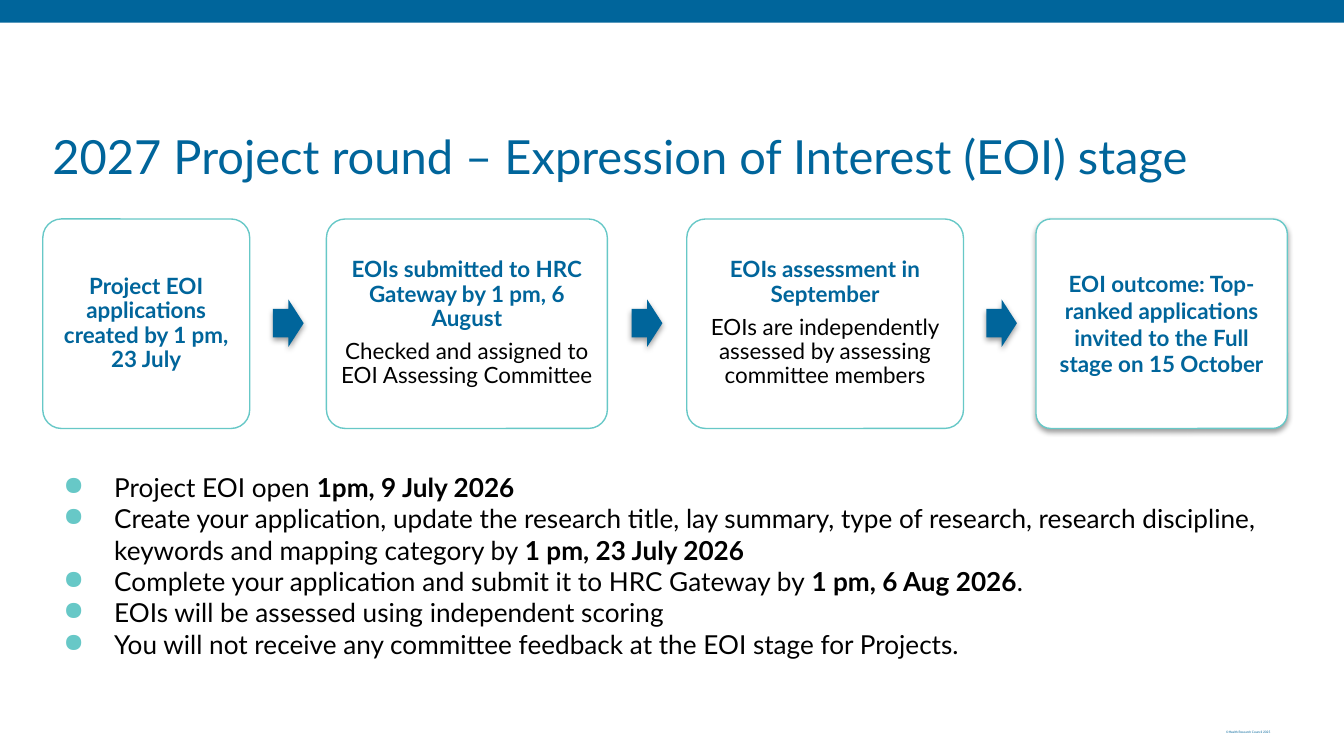
from lxml import etree
from pptx import Presentation
from pptx.dml.color import RGBColor
from pptx.enum.shapes import MSO_SHAPE
from pptx.enum.text import MSO_ANCHOR, MSO_AUTO_SIZE, PP_ALIGN
from pptx.oxml import parse_xml
from pptx.oxml.ns import nsdecls, qn
from pptx.util import Cm, Pt

RECTANGLE = MSO_SHAPE.RECTANGLE
ROUNDED = MSO_SHAPE.ROUNDED_RECTANGLE
RIGHT_ARROW = MSO_SHAPE.RIGHT_ARROW
TOP, MIDDLE = MSO_ANCHOR.TOP, MSO_ANCHOR.MIDDLE
LEFT, CENTER, RIGHT = PP_ALIGN.LEFT, PP_ALIGN.CENTER, PP_ALIGN.RIGHT
NO_FIT = MSO_AUTO_SIZE.NONE

BLUE = RGBColor(0x00, 0x65, 0x9B)
TEAL = RGBColor(0x67, 0xC8, 0xC7)
BLACK = RGBColor(0x00, 0x00, 0x00)
WHITE = RGBColor(0xFF, 0xFF, 0xFF)
FONT = "Lato"


def set_frame(frame, anchor, side=0.25):
    frame.word_wrap = True
    frame.auto_size = NO_FIT
    frame.vertical_anchor = anchor
    frame.margin_left = frame.margin_right = Cm(side)
    frame.margin_top = frame.margin_bottom = Cm(0.25)


def add_shadow(shape):
    shape.shadow.inherit = False
    effects = shape._element.spPr.find(qn("a:effectLst"))
    effects.append(parse_xml(
        f'<a:outerShdw {nsdecls("a")} blurRad="{Pt(3.1)}" dist="{Pt(1.6)}" '
        'dir="5400000" rotWithShape="0"><a:srgbClr val="000000">'
        '<a:alpha val="38000"/></a:srgbClr></a:outerShdw>'))


deck = Presentation()
deck.slide_width, deck.slide_height = Cm(25.4), Cm(14.29)
slide = deck.slides.add_slide(deck.slide_layouts[5])
shapes = slide.shapes

# Top band
band = shapes.add_shape(RECTANGLE, Cm(-0.08), Cm(-0.03), Cm(25.5), Cm(0.46))
band.shadow.inherit = False
band.fill.solid()
band.fill.fore_color.rgb = BLUE
band.line.fill.background()

# Copyright line
copyright_box = shapes.add_textbox(Cm(18.49), Cm(13.49), Cm(5.77), Cm(0.64))
set_frame(copyright_box.text_frame, MIDDLE)
para = copyright_box.text_frame.paragraphs[0]
para.alignment = RIGHT
span = para.add_run()
span.text = "©Health Research Council 2025"
span.font.name, span.font.size = FONT, Pt(3)
span.font.color.rgb = BLUE
span.font._element.set("baseline", "-25000")

# Title
title = shapes.title
title.left, title.top, title.width, title.height = Cm(0.74), Cm(2.16), Cm(23.67), Cm(1.6)
set_frame(title.text_frame, TOP)
title.text_frame.text = "2027 Project round – Expression of Interest (EOI) stage"
para = title.text_frame.paragraphs[0]
para.alignment = LEFT
para.font.name, para.font.size = FONT, Pt(25.2)
para.font.color.rgb = BLUE

# Bulleted details: each item alternates plain and bold text
DETAILS = [
    ("Project EOI open ", "1pm, 9 July 2026"),
    ("Create your application, update the research title, lay summary, type of research, "
     "research discipline, keywords and mapping category by ", "1 pm, 23 July 2026"),
    ("Complete your application and submit it to HRC Gateway by ", "1 pm, 6 Aug 2026", "."),
    ("EOIs will be assessed using independent scoring",),
    ("You will not receive any committee feedback at the EOI stage for Projects.",),
]
details = shapes.add_textbox(Cm(0.64), Cm(8.66), Cm(23.67), Cm(4.47))
frame = details.text_frame
set_frame(frame, TOP)
for i, parts in enumerate(DETAILS):
    para = frame.add_paragraph() if i else frame.paragraphs[0]
    props = para._p.get_or_add_pPr()
    props.set("marL", str(Cm(1.27)))
    props.set("indent", str(Cm(-0.96)))
    color = etree.SubElement(props, qn("a:buClr"))
    etree.SubElement(color, qn("a:srgbClr"), val=str(TEAL))
    etree.SubElement(props, qn("a:buChar"), char="●")
    para.font.name, para.font.size = FONT, Pt(14)
    para.font.color.rgb = BLACK
    for j, part in enumerate(parts):
        span = para.add_run()
        span.text = part
        span.font.bold = j % 2 == 1

# Process steps: left, width, heading, explanation
STEPS = [
    (0.81, 3.91, "Project EOI applications created by 1 pm, 23 July", None),
    (6.17, 5.31, "EOIs submitted to HRC Gateway by 1 pm, 6 August",
     "Checked and assigned to EOI Assessing Committee"),
    (12.98, 5.23, "EOIs assessment in September",
     "EOIs are independently assessed by assessing committee members"),
    (19.58, 4.75, "EOI outcome: Top-ranked applications invited to the Full stage "
     "on 15 October", None),
]
for i, (left, width, heading, explanation) in enumerate(STEPS):
    is_outcome = i == len(STEPS) - 1
    step = shapes.add_shape(ROUNDED, Cm(left), Cm(4.14), Cm(width), Cm(3.96))
    step.adjustments[0] = 0.07 if is_outcome else 0.09
    step.fill.solid()
    step.fill.fore_color.rgb = WHITE
    step.line.color.rgb = TEAL
    step.line.width = Pt(0.75)
    if is_outcome:
        add_shadow(step)
    else:
        step.shadow.inherit = False
    frame = step.text_frame
    set_frame(frame, MIDDLE, side=0.15)
    frame.text = f"{heading}\n{explanation}" if explanation else heading
    for j, para in enumerate(frame.paragraphs):
        para.alignment = CENTER
        if not is_outcome:
            para.line_spacing = 0.9
            para.space_after = Pt(5)
        para.font.name, para.font.size = FONT, Pt(12)
        para.font.bold = j == 0
        para.font.color.rgb = BLACK if j else BLUE

# Arrows between the steps
for left in (5.16, 11.94, 18.64):
    arrow = shapes.add_shape(RIGHT_ARROW, Cm(left), Cm(5.66), Cm(0.58), Cm(0.9))
    arrow.adjustments[0] = 0.6
    arrow.adjustments[1] = 0.5
    arrow.fill.solid()
    arrow.fill.fore_color.rgb = BLUE
    arrow.line.fill.background()
    add_shadow(arrow)

deck.save("out.pptx")
